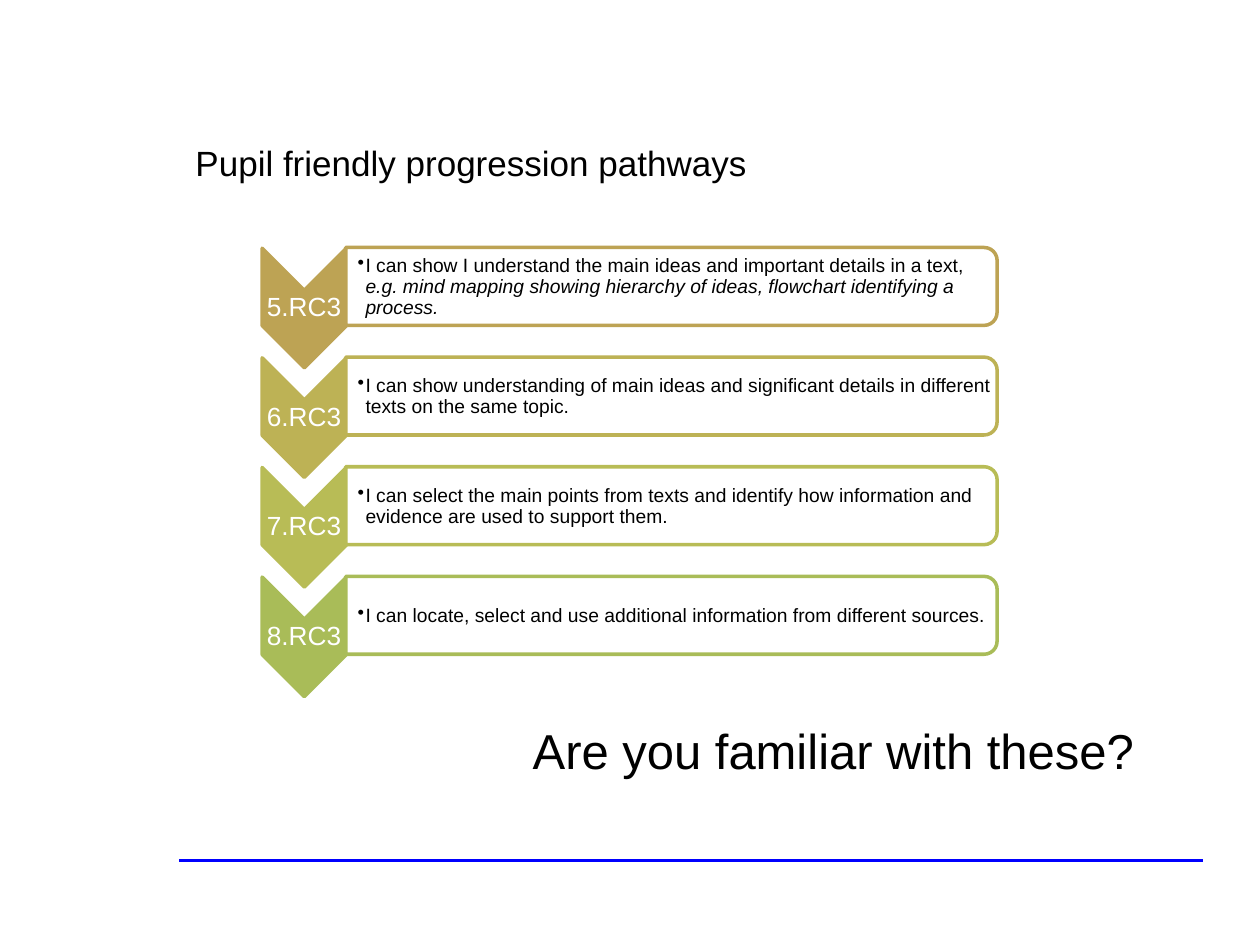
"""Build the slide of four pupil progression steps."""
from lxml import etree
from pptx import Presentation
from pptx.dml.color import RGBColor
from pptx.enum import shapes, text
from pptx.oxml.ns import qn
from pptx.util import Cm, Pt

BLACK = RGBColor(0, 0, 0)
WHITE = RGBColor(255, 255, 255)
BLUE = RGBColor(0, 0, 255)
GOLD = RGBColor(0xBD, 0xA3, 0x54)
SAND = RGBColor(0xBD, 0xB2, 0x55)
LIME = RGBColor(0xB8, 0xBC, 0x56)
GREEN = RGBColor(0xA9, 0xBC, 0x58)

STEPS = [
    ("5.RC3", GOLD, "I can show I understand the main ideas and important details in a text, ",
     "e.g. mind mapping showing hierarchy of ideas, flowchart identifying a process."),
    ("6.RC3", SAND, "I can show understanding of main ideas and significant details "
     "in different texts on the same topic.", ""),
    ("7.RC3", LIME, "I can select the main points from texts and identify how information "
     "and evidence are used to support them.", ""),
    ("8.RC3", GREEN, "I can locate, select and use additional information "
     "from different sources.", ""),
]
PITCH = 2.21


def write(para, words, size, color=BLACK, slant=None):
    run = para.add_run()
    run.text = words
    font = run.font
    font.name, font.size, font.italic = "Arial", Pt(size), slant
    font.color.rgb = color


def add_box(left, top, width, height, inset):
    frame = slide.shapes.add_textbox(Cm(left), Cm(top), Cm(width), Cm(height)).text_frame
    frame.word_wrap = True
    frame.vertical_anchor = text.MSO_ANCHOR.MIDDLE
    frame.margin_left = Cm(inset)
    frame.margin_right = frame.margin_top = frame.margin_bottom = Cm(0.03)
    para = frame.paragraphs[0]
    para.line_spacing = 0.9
    return para


prs = Presentation()
prs.slide_width, prs.slide_height = Cm(25.4), Cm(19.05)
slide = prs.slides.add_slide(prs.slide_layouts[5])

rule = slide.shapes.add_connector(
    shapes.MSO_CONNECTOR.STRAIGHT, Cm(3.61), Cm(17.35), Cm(24.26), Cm(17.35))
rule.line.color.rgb = BLUE
rule.line.width = Pt(1.5)
etree.SubElement(rule.line._get_or_add_ln().getparent(), qn("a:effectLst"))

title = slide.shapes.title
title.left, title.top, title.width, title.height = Cm(3.94), Cm(2.86), Cm(16.59), Cm(1.09)
frame = title.text_frame
frame.word_wrap = False
frame.auto_size = text.MSO_AUTO_SIZE.NONE
frame.vertical_anchor = text.MSO_ANCHOR.TOP
frame.margin_left = frame.margin_right = frame.margin_top = frame.margin_bottom = 0
frame.paragraphs[0].alignment = text.PP_ALIGN.LEFT
write(frame.paragraphs[0], "Pupil friendly progression pathways", 20)

for row, (code, color, plain, slant) in enumerate(STEPS):
    drop = row * PITCH
    parts = [
        (shapes.MSO_SHAPE.CHEVRON, 4.93, 5.36, 2.41, 1.7, color),
        (shapes.MSO_SHAPE.ROUND_2_SAME_RECTANGLE, 12.75, -0.79, 1.57, 13.13, WHITE),
    ]
    for kind, left, top, width, height, fill in parts:
        shape = slide.shapes.add_shape(kind, Cm(left), Cm(top + drop), Cm(width), Cm(height))
        shape.rotation = 90
        shape.shadow.inherit = False
        shape.fill.solid()
        shape.fill.fore_color.rgb = fill
        shape.line.color.rgb = color
        shape.line.width = Pt(2)

    label = add_box(5.28, 5.84 + drop, 1.7, 0.74, 0.03)
    label.alignment = text.PP_ALIGN.CENTER
    write(label, code, 15, WHITE)

    body = add_box(6.98, 5.08 + drop, 13.06, 1.42, 0.23)
    props = body._p.get_or_add_pPr()
    props.set("marL", str(Cm(0.16)))
    props.set("indent", str(Cm(-0.16)))
    etree.SubElement(props, qn("a:buChar")).set("char", "•")
    write(body, plain, 11)
    if slant:
        write(body, slant, 11, slant=True)

ask = slide.shapes.add_textbox(Cm(10.49), Cm(14.4), Cm(14.25), Cm(1.45)).text_frame
ask.word_wrap = True
write(ask.paragraphs[0], "Are you familiar with these?", 28)

prs.save("out.pptx")
